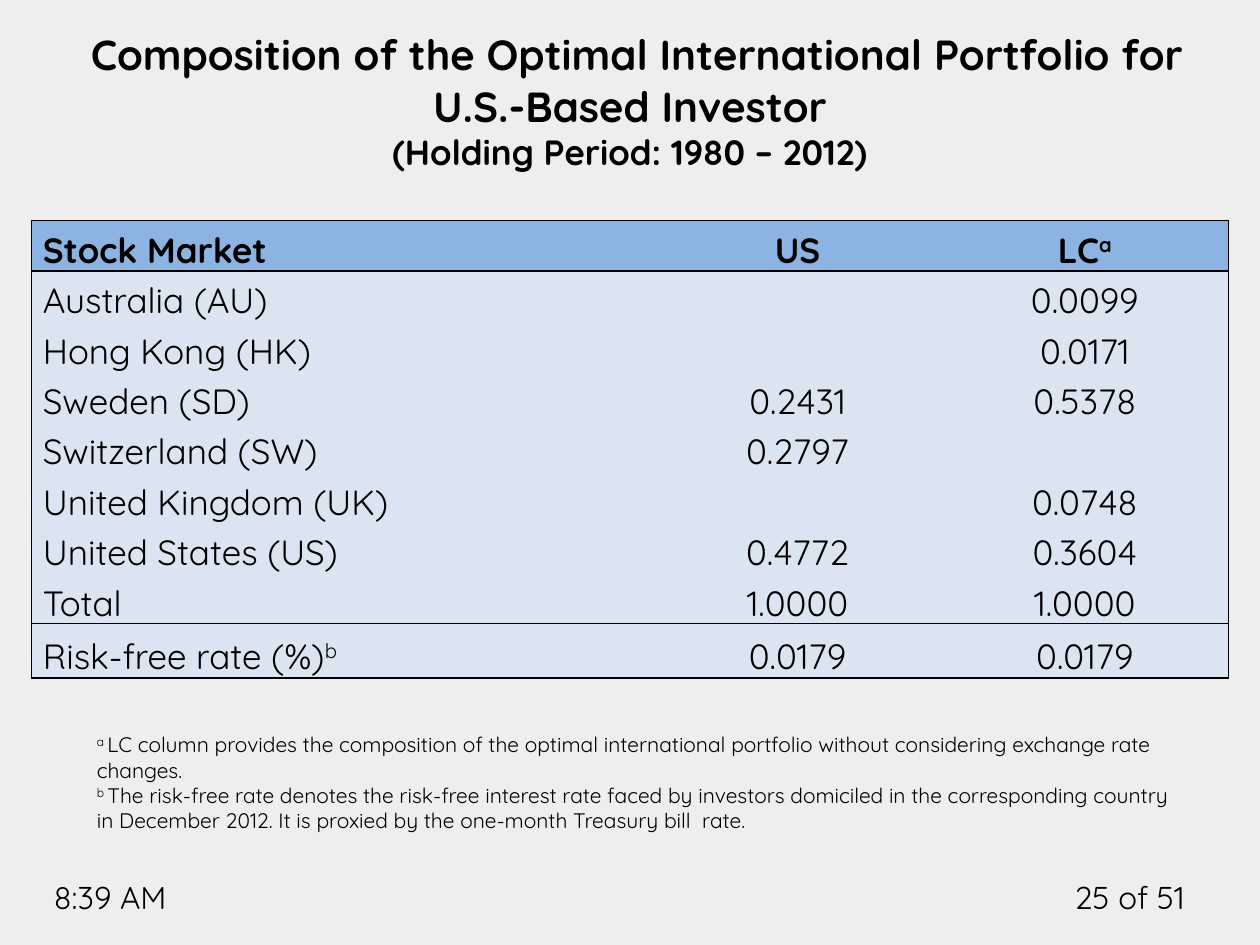
from lxml import etree
from pptx import Presentation
from pptx import util as u
from pptx.dml.color import RGBColor
from pptx.enum import text
from pptx.oxml import ns

FONT = "Quicksand"
INK, PAGE_FILL, HEAD_FILL, BODY_FILL = "000000", "EEEEEE", "8DB3E2", "DBE5F1"
LEFT, CENTER, RIGHT = text.PP_ALIGN.LEFT, text.PP_ALIGN.CENTER, text.PP_ALIGN.RIGHT

ROWS = [
    ("Stock Market", "US", "LC^a"),
    ("Australia (AU)", "", "0.0099"),
    ("Hong Kong (HK)", "", "0.0171"),
    ("Sweden (SD)", "0.2431", "0.5378"),
    ("Switzerland (SW)", "0.2797", ""),
    ("United Kingdom (UK)", "", "0.0748"),
    ("United States (US)", "0.4772", "0.3604"),
    ("Total", "1.0000", "1.0000"),
    ("Risk-free rate (%)^b", "0.0179", "0.0179"),
]
NOTES = [
    ("a ", "LC column provides the composition of the optimal international portfolio "
           "without considering exchange rate changes."),
    ("b ", "The risk-free rate denotes the risk-free interest rate faced by investors "
           "domiciled in the corresponding country in December 2012. It is proxied by "
           "the one-month Treasury bill  rate."),
]


def color(value):
    return RGBColor.from_string(value)


def place(shape, box):
    shape.left, shape.top, shape.width, shape.height = (u.Inches(n) for n in box)


def add_span(para, words, size, bold=False, raised=False):
    span = para.add_run()
    span.text = words
    span.font.name, span.font.size, span.font.bold = FONT, u.Pt(size), bold
    span.font.color.rgb = color(INK)
    if raised:
        span._r.get_or_add_rPr().set("baseline", "30000")


def add_title(page, box):
    title = page.shapes.title
    place(title, box)
    frame = title.text_frame
    frame.word_wrap = True
    frame.auto_size = text.MSO_AUTO_SIZE.NONE
    frame.vertical_anchor = text.MSO_ANCHOR.BOTTOM
    para = frame.paragraphs[0]
    para.alignment = CENTER
    add_span(para, " ", 28, True)
    add_span(para, "Composition of the Optimal International Portfolio for "
                   "U.S.-Based Investor", 24, True)
    para.add_line_break()
    add_span(para, "(Holding Period: 1980 – 2012)", 20, True)


def add_text(page, box, paragraphs, size, align=LEFT):
    """Each paragraph is a pair: a raised mark, which may be empty, and its words."""
    shape = page.shapes.add_textbox(0, 0, 0, 0)
    place(shape, box)
    frame = shape.text_frame
    frame.word_wrap = True
    frame.auto_size = text.MSO_AUTO_SIZE.SHAPE_TO_FIT_TEXT
    for index, (mark, words) in enumerate(paragraphs):
        para = frame.add_paragraph() if index else frame.paragraphs[0]
        para.alignment = align
        if mark:
            add_span(para, mark, size, raised=True)
        add_span(para, words, size)


def set_borders(cell, sides):
    """Rule the given sides (any of L, R, T, B) and leave the others bare."""
    props = cell._tc.get_or_add_tcPr()
    for index, side in enumerate("LRTB"):
        line = etree.Element(ns.qn(f"a:ln{side}"), w=str(u.Pt(1)))
        if side in sides:
            fill = etree.SubElement(line, ns.qn("a:solidFill"))
            etree.SubElement(fill, ns.qn("a:srgbClr"), val=INK)
        else:
            etree.SubElement(line, ns.qn("a:noFill"))
        props.insert(index, line)


def fill_cell(cell, words, first, header):
    cell.fill.solid()
    cell.fill.fore_color.rgb = color(HEAD_FILL if header else BODY_FILL)
    cell.vertical_anchor = text.MSO_ANCHOR.BOTTOM
    cell.margin_left = u.Inches(0.09 if first else 0.01)
    cell.margin_right = cell.margin_top = u.Inches(0.01)
    cell.margin_bottom = 0
    para = cell.text_frame.paragraphs[0]
    para.alignment = LEFT if first else CENTER
    if not words:
        para.font.size = u.Pt(20)
        return
    para.line_spacing, para.space_after = 1.15, u.Pt(10)
    base, _, mark = words.partition("^")
    add_span(para, base, 20, header)
    if mark:
        add_span(para, mark, 20, header, raised=True)


def add_weights_table(page, box):
    last_row, last_col = len(ROWS) - 1, len(ROWS[0]) - 1
    frame = page.shapes.add_table(len(ROWS), len(ROWS[0]), *(u.Inches(n) for n in box))
    table = frame.table
    table.horz_banding = table.first_row = False
    for column, share in zip(table.columns, (0.52, 0.24, 0.24)):
        column.width = u.Inches(box[2] * share)
    for r, row in enumerate(ROWS):
        table.rows[r].height = u.Inches(0.43 if r == last_row else 0.4)
        for c, words in enumerate(row):
            cell = table.cell(r, c)
            fill_cell(cell, words, c == 0, r == 0)
            sides = "L" * (c == 0) + "R" * (c == last_col)
            sides += "T" * (r in (0, 1, last_row))
            sides += "B" * (r in (0, last_row - 1, last_row))
            set_borders(cell, sides)


def main():
    deck = Presentation()
    deck.slide_width, deck.slide_height = u.Inches(10), u.Inches(7.5)
    page = deck.slides.add_slide(deck.slide_layouts[5])
    page.background.fill.solid()
    page.background.fill.fore_color.rgb = color(PAGE_FILL)
    add_text(page, (8.33, 6.92, 1.17, 0.4), [("", "25 of 51")], 18, RIGHT)
    add_text(page, (0.33, 6.92, 1.58, 0.4), [("", "8:39 AM")], 18)
    add_title(page, (0.5, 0.17, 9, 1.25))
    add_text(page, (0.67, 5.76, 8.83, 1.11), NOTES, 12)
    add_weights_table(page, (0.25, 1.75, 9.5, 3.63))
    deck.save("out.pptx")


if __name__ == "__main__":
    main()
